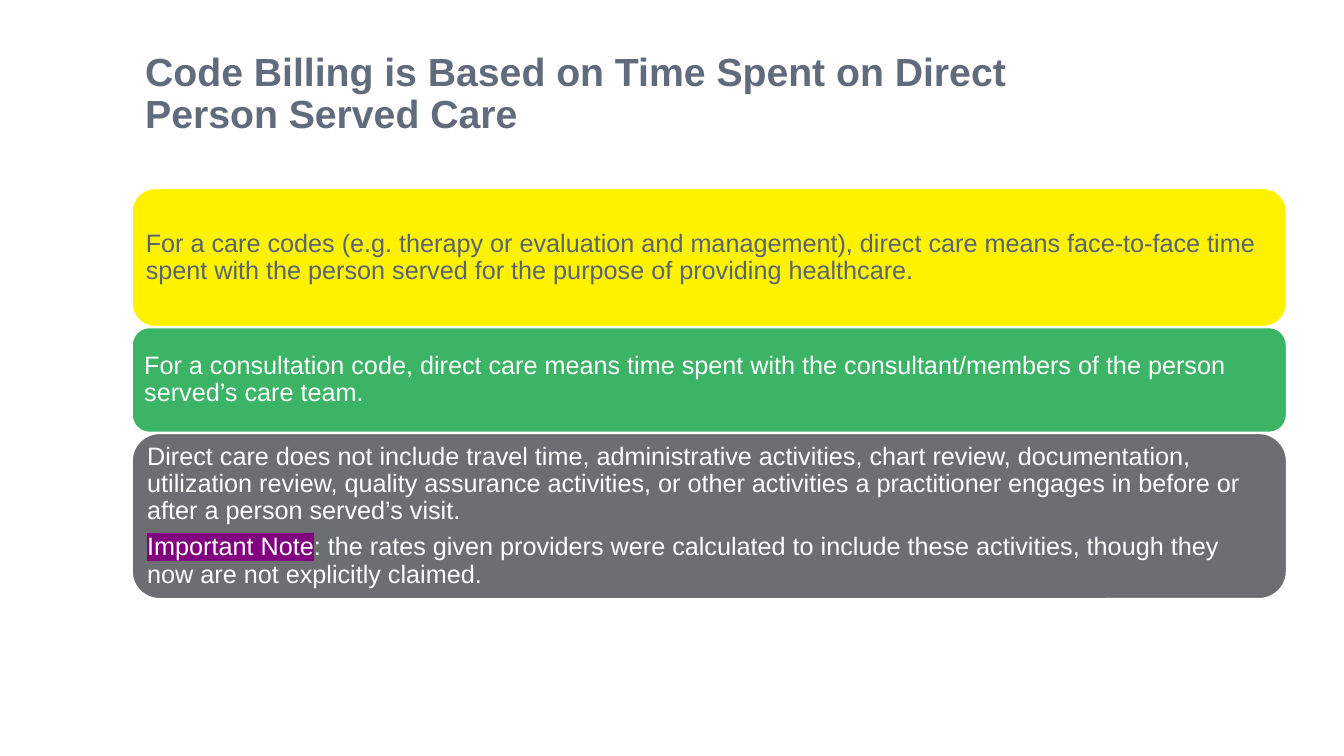
from dataclasses import dataclass
from lxml.etree import SubElement
from pptx import Presentation
from pptx.dml.color import RGBColor
from pptx.enum.shapes import MSO_SHAPE
from pptx.enum.text import MSO_ANCHOR, PP_ALIGN
from pptx.oxml.ns import qn
from pptx.util import Inches, Pt


@dataclass(frozen=True)
class Theme:
    font: str = "Arial"
    title: str = "606B7C"
    ink: str = "596473"
    white: str = "FFFFFF"
    yellow: str = "FFF200"
    green: str = "3BB465"
    gray: str = "6D6E71"
    mark: str = "800080"
    head: int = 28
    body: int = 18


THEME = Theme()
TITLE = "Code Billing is Based on Time Spent on Direct Person Served Care"
CARDS = [
    (1.37, THEME.yellow, THEME.ink, [
        [("For a care codes (e.g. therapy or evaluation and management), direct care means "
          "face-to-face time spent with the person served for the purpose of providing "
          "healthcare.", None)]]),
    (1.04, THEME.green, THEME.white, [
        [("For a consultation code, direct care means time spent with the "
          "consultant/members of the person served’s care team.", None)]]),
    (1.64, THEME.gray, THEME.white, [
        [("Direct care does not include travel time, administrative activities, chart "
          "review, documentation, utilization review, quality assurance activities, or "
          "other activities a practitioner engages in before or after a person served’s "
          "visit.", None)],
        [("Important Note", THEME.mark),
         (": the rates given providers were calculated to include these activities, "
          "though they now are not explicitly claimed.", None)]]),
]
WIDE, HIGH = 13.33, 7.5
LEFT, TOP, SPAN, GAP = 1.31, 1.87, 11.45, 0.01


def write(shape, paras, *, size, color, bold=False, inset=0.0, after=0.0,
          anchor=MSO_ANCHOR.MIDDLE):
    frame = shape.text_frame
    frame.word_wrap = True
    frame.vertical_anchor = anchor
    frame.margin_left = frame.margin_right = Inches(inset)
    frame.margin_top = frame.margin_bottom = Inches(inset)
    for i, runs in enumerate(paras):
        para = frame.add_paragraph() if i else frame.paragraphs[0]
        para.alignment = PP_ALIGN.LEFT
        para.line_spacing = 0.9
        para.space_after = Pt(after)
        for text, mark in runs:
            run = para.add_run()
            run.text = text
            font = run.font
            font.size, font.bold, font.name = Pt(size), bold, THEME.font
            font.color.rgb = RGBColor.from_string(color)
            if mark:
                props = run._r.get_or_add_rPr()
                light = SubElement(props, qn("a:highlight"))
                SubElement(light, qn("a:srgbClr")).set("val", mark)
                props.find(qn("a:solidFill")).addnext(light)


def main():
    deck = Presentation()
    deck.slide_width, deck.slide_height = Inches(WIDE), Inches(HIGH)
    slide = deck.slides.add_slide(deck.slide_layouts[6])

    title = slide.shapes.add_textbox(*map(Inches, (1.44, 0.5, 0.7 * WIDE, 0.86)))
    write(title, [[(TITLE, None)]], size=THEME.head, color=THEME.title, bold=True,
          anchor=MSO_ANCHOR.BOTTOM)

    top = TOP
    for tall, fill, ink, paras in CARDS:
        card = slide.shapes.add_shape(
            MSO_SHAPE.ROUNDED_RECTANGLE, *map(Inches, (LEFT, top, SPAN, tall)))
        card.shadow.inherit = False
        card.fill.solid()
        card.fill.fore_color.rgb = RGBColor.from_string(fill)
        card.line.color.rgb = RGBColor.from_string(THEME.white)
        card.line.width = Pt(1)
        write(card, paras, size=THEME.body, color=ink, inset=0.07,
              after=0.35 * THEME.body)
        top += tall + GAP

    deck.save("out.pptx")


if __name__ == "__main__":
    main()
